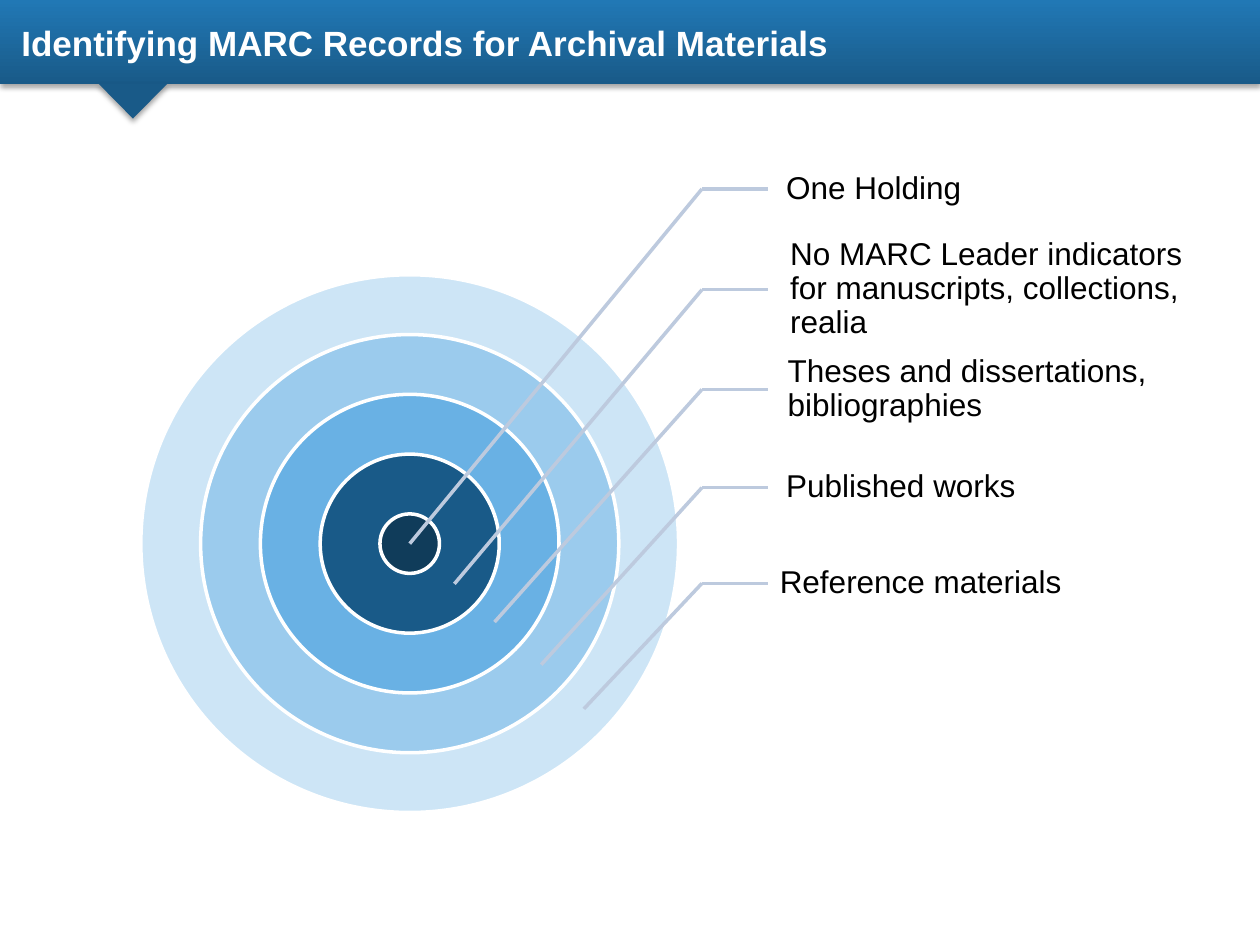
from lxml import etree
from pptx import Presentation
from pptx.dml.color import RGBColor
from pptx.enum.shapes import MSO_CONNECTOR as CONN, MSO_SHAPE as SHAPE
from pptx.enum.text import MSO_ANCHOR as ANCHOR, PP_ALIGN as ALIGN
from pptx.oxml import parse_xml
from pptx.oxml.ns import nsdecls, qn
from pptx.util import Cm, Pt

FONT = "Arial"
WHITE, BLACK = "FFFFFF", "000000"
BAR_DARK, BAR_LIGHT = "195A88", "2178B5"
LEADER = "BDCADE"
RINGS = ["CDE5F6", "9BCBED", "69B1E4", "195A88", "103C5A"]  # outer to inner
CORE, RING_STEP = 1.2, 2.41  # diameters in cm

# Label, line height, label shift and width, leader tip from the rings' centre
LABELS = [
    ("One Holding", 0.97, 0, 5.41, (0, 0)),
    ("No MARC Leader indicators for manuscripts, collections, realia",
     3.0, 0.08, 8.84, (0.9, 0.81)),
    ("Theses and dissertations, bibliographies", 5.01, 0.03, 8.26, (1.71, 1.58)),
    ("Published works", 6.99, 0, 5.41, (2.65, 2.44)),
    ("Reference materials", 8.92, -0.13, 9.04, (3.51, 3.33)),
]


def rgb(color):
    return RGBColor.from_string(color)


def set_text(tf, text, size, color, margins, bold=False):
    tf.word_wrap = True
    tf.vertical_anchor = ANCHOR.MIDDLE
    tf.margin_left, tf.margin_top, tf.margin_right, tf.margin_bottom = map(Cm, margins)
    tf.text = text
    p = tf.paragraphs[0]
    p.alignment = ALIGN.LEFT
    font = p.runs[0].font
    font.name, font.size, font.bold = FONT, Pt(size), bold
    font.color.rgb = rgb(color)
    return p


def add_shape(slide, kind, left, top, width, height):
    sp = slide.shapes.add_shape(kind, Cm(left), Cm(top), Cm(width), Cm(height))
    sp.shadow.inherit = False
    return sp


def drop_shadow(sp):
    effects = sp._element.spPr.find(qn("a:effectLst"))
    effects.append(parse_xml(
        f'<a:outerShdw {nsdecls("a")} blurRad="{Pt(3.1)}" dist="{Pt(1.8)}" '
        'dir="5400000" rotWithShape="0"><a:srgbClr val="000000">'
        '<a:alpha val="35000"/></a:srgbClr></a:outerShdw>'))


def add_leader(slide, x1, y1, x2, y2):
    line = slide.shapes.add_connector(CONN.STRAIGHT, Cm(x1), Cm(y1), Cm(x2), Cm(y2))
    line.line.color.rgb = rgb(LEADER)
    line.line.width = Pt(2)
    etree.SubElement(line._element.spPr, qn("a:effectLst"))


def add_header(slide, left, top, width, height):
    # Gradient bar
    bar = add_shape(slide, SHAPE.RECTANGLE, left, top, width, height)
    bar.fill.gradient()
    bar.fill.gradient_angle = 90
    for stop, color in zip(bar.fill.gradient_stops, (BAR_DARK, BAR_LIGHT)):
        stop.color.rgb = rgb(color)

    # Pointer under the bar
    pointer = add_shape(slide, SHAPE.ISOSCELES_TRIANGLE,
                        left + 1.98, top + height - 0.02, 1.4, 0.71)
    pointer.rotation = 180
    pointer.fill.solid()
    pointer.fill.fore_color.rgb = rgb(BAR_DARK)
    for sp in (bar, pointer):
        sp.line.fill.background()
        drop_shadow(sp)

    # Title, brought in front of the bar
    title = slide.shapes.title
    title.left, title.top = Cm(left + 0.43), Cm(top)
    title.width, title.height = Cm(23.7), Cm(height)
    set_text(title.text_frame, "Identifying MARC Records for Archival Materials",
             20, WHITE, (0, 0.13, 0, 0.13), bold=True)
    pointer._element.addnext(title._element)


def add_target(slide, left, top, height):
    # Concentric rings in the lower left corner of the box
    outer = CORE + RING_STEP * (len(RINGS) - 1)
    cx, cy = left + outer / 2, top + height - outer / 2
    for i, color in enumerate(RINGS):
        d = outer - i * RING_STEP
        ring = add_shape(slide, SHAPE.OVAL, cx - d / 2, cy - d / 2, d, d)
        ring.fill.solid()
        ring.fill.fore_color.rgb = rgb(color)
        ring.line.color.rgb = rgb(WHITE)
        ring.line.width = Pt(2)

    # Labels with bent leaders
    bend, end, label_h = left + 11.31, left + 12.65, 1.9
    for text, dy, shift, width, (tip_x, tip_y) in LABELS:
        y = top + dy
        box = slide.shapes.add_textbox(Cm(end + shift), Cm(y - label_h / 2),
                                       Cm(width), Cm(label_h))
        p = set_text(box.text_frame, text, 18, BLACK, (0.36, 0.08, 0.08, 0.08))
        p.line_spacing = 0.9
        add_leader(slide, bend, y, end, y)
        add_leader(slide, bend, y, cx + tip_x, cy + tip_y)


def main():
    prs = Presentation()
    prs.slide_width, prs.slide_height = Cm(25.4), Cm(19.05)
    slide = prs.slides.add_slide(prs.slide_layouts[5])
    add_header(slide, 0, 0, 25.4, 1.7)
    add_target(slide, 2.84, 2.84, 13.54)
    prs.save("out.pptx")


if __name__ == "__main__":
    main()
